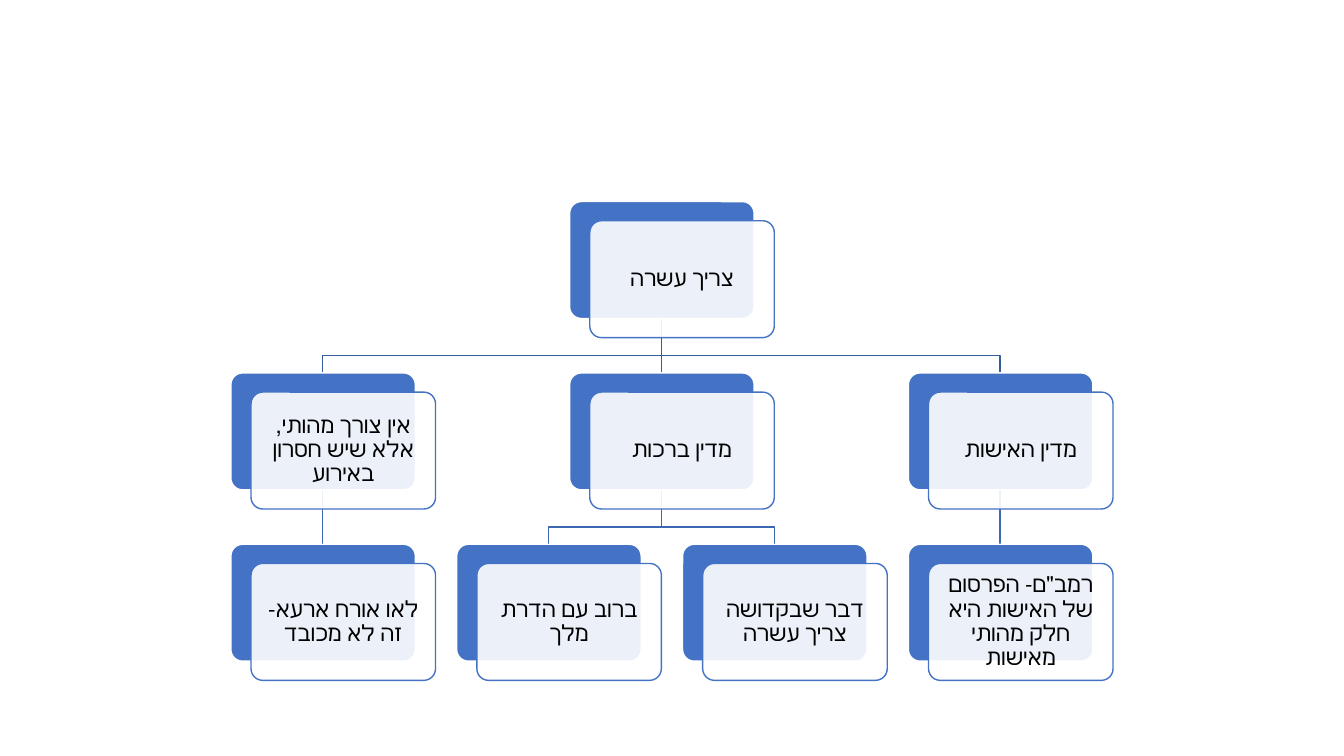
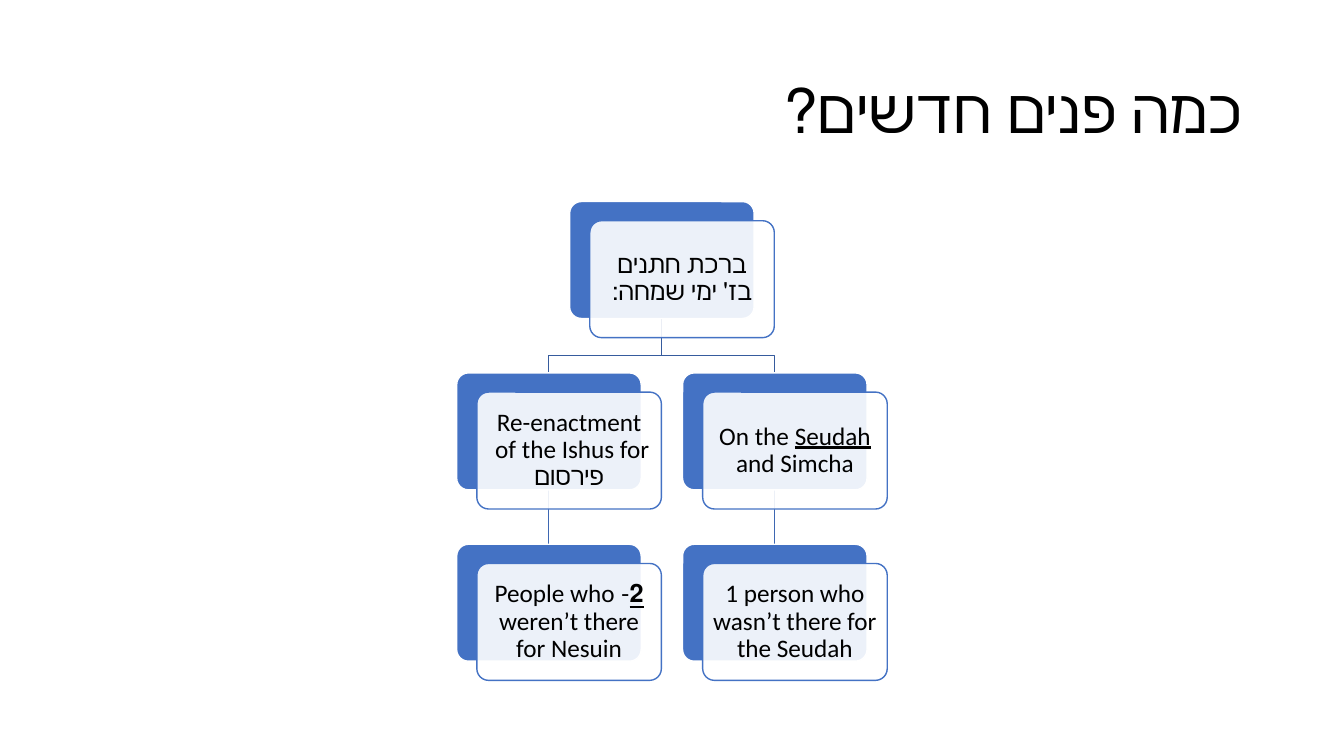
from dataclasses import dataclass

from lxml import etree
from pptx import Presentation
from pptx.dml.color import RGBColor
from pptx.enum import shapes, text
from pptx.oxml import ns
from pptx.util import Pt

PX = 9144


@dataclass(frozen=True)
class Theme:
    font: str = "Calibri"
    ink: str = "000000"
    blue: str = "4472C4"
    white: str = "FFFFFF"
    links: tuple = ("365B9D", "3E67B2")
    head: int = 44
    opaque: int = 90
    stroke: int = 1
    tight: float = 0.9


@dataclass(frozen=True)
class Grid:
    left: int = 565
    top: int = 200
    half: int = 112
    drop: int = 170
    wide: int = 183
    high: int = 116
    shift: tuple = (20, 19)
    bend: int = 37
    inset: int = 7

    def spot(self, col, row):
        return self.left + col * self.half, self.top + row * self.drop


@dataclass(frozen=True)
class Node:
    col: int
    row: int
    words: tuple
    root: int = None
    marks: str = ""
    rtl: bool = True


class Deck:
    def __init__(self, theme, grid):
        self.theme, self.grid = theme, grid
        self.show = Presentation()
        self.show.slide_width, self.show.slide_height = 1333 * PX, 750 * PX
        self.slide = None

    def page(self):
        self.slide = self.show.slides.add_slide(self.show.slide_layouts[6])

    def stroke(self, shape, color):
        shape.line.color.rgb = RGBColor.from_string(color)
        shape.line.width = Pt(self.theme.stroke)

    def label(self, shape, words, size, align, inset, rtl=True, marks=""):
        frame = shape.text_frame
        frame.word_wrap = True
        frame.vertical_anchor = text.MSO_ANCHOR.MIDDLE
        frame.margin_left = frame.margin_right = inset[0] * PX
        frame.margin_top = frame.margin_bottom = inset[1] * PX
        para = frame.paragraphs[0]
        para.text = words[0]
        for word in words[1:]:
            para.add_run().text = word
        para.alignment = align
        para.line_spacing = self.theme.tight
        para._p.get_or_add_pPr().set("rtl", str(int(rtl)))
        for run in para.runs:
            run.font.name = self.theme.font
            run.font.size = Pt(size)
            run.font.color.rgb = RGBColor.from_string(self.theme.ink)
        for run, mark in zip(para.runs, marks):
            run.font.bold = mark == "b"
            run.font.underline = mark in "bu"

    def title(self, words):
        box = self.slide.shapes.add_textbox(92 * PX, 40 * PX, 1150 * PX, 145 * PX)
        self.label(box, (words,), self.theme.head, text.PP_ALIGN.RIGHT, (10, 5))

    def panel(self, x, y, fill, line):
        grid = self.grid
        shape = self.slide.shapes.add_shape(
            shapes.MSO_SHAPE.ROUNDED_RECTANGLE,
            x * PX, y * PX, grid.wide * PX, grid.high * PX)
        shape.adjustments[0] = 0.1
        shape.shadow.inherit = False
        shape.fill.solid()
        shape.fill.fore_color.rgb = RGBColor.from_string(fill)
        self.stroke(shape, line)
        return shape

    def card(self, node, size):
        theme, grid = self.theme, self.grid
        x, y = grid.spot(node.col, node.row)
        self.panel(x, y, theme.blue, theme.white)
        front = self.panel(x + grid.shift[0], y + grid.shift[1], theme.white, theme.blue)
        color = front._element.spPr.find(ns.qn("a:solidFill")).find(ns.qn("a:srgbClr"))
        etree.SubElement(color, ns.qn("a:alpha")).set("val", str(theme.opaque * 1000))
        self.label(front, node.words, size, text.PP_ALIGN.CENTER,
                   (grid.inset, grid.inset), node.rtl, node.marks)

    def link(self, start, end):
        grid = self.grid
        x, y = grid.spot(start.col, start.row)
        far, low = grid.spot(end.col, end.row)
        x, far, y = x + grid.wide // 2, far + grid.wide // 2, y + grid.high
        if x == far:
            line = self.slide.shapes.add_connector(
                shapes.MSO_CONNECTOR.STRAIGHT, x * PX, y * PX, far * PX, low * PX)
            etree.SubElement(line._element.spPr, ns.qn("a:effectLst"))
        else:
            bend = y + grid.bend
            elbow = self.slide.shapes.build_freeform(x, y, PX)
            elbow.add_line_segments([(x, bend), (far, bend), (far, low)], close=False)
            line = elbow.convert_to_shape()
            line.fill.background()
            line.shadow.inherit = False
        self.stroke(line, self.theme.links[start.row])

    def tree(self, nodes, size):
        for node in nodes:
            if node.root is not None:
                self.link(nodes[node.root], node)
        for node in nodes:
            self.card(node, size)


NEEDS = (
    Node(0, 0, ("צריך עשרה",)),
    Node(-3, 1, ("אין צורך מהותי, אלא שיש חסרון באירוע",), 0),
    Node(0, 1, ("מדין ברכות",), 0),
    Node(3, 1, ("מדין האישות",), 0),
    Node(-3, 2, ("לאו אורח ארעא- זה לא מכובד",), 1),
    Node(-1, 2, ("ברוב עם הדרת מלך",), 2),
    Node(1, 2, ("דבר שבקדושה צריך עשרה",), 2),
    Node(3, 2, ('רמב"ם- הפרסום של האישות היא חלק מהותי מאישות',), 3),
)

FACES = (
    Node(0, 0, ("ברכת חתנים בז' ימי שמחה:",)),
    Node(-1, 1, ("Re-enactment of the Ishus for \vפירסום",), 0),
    Node(1, 1, ("On the ", "Seudah", " and Simcha"), 0, "-u-"),
    Node(-1, 2, ("2", "- People who weren’t there for Nesuin"), 1, "b-"),
    Node(1, 2, ("1 person who wasn’t there for the Seudah",), 2, rtl=False),
)


def main():
    deck = Deck(Theme(), Grid())
    deck.page()
    deck.tree(NEEDS, 16)
    deck.page()
    deck.title("כמה פנים חדשים?")
    deck.tree(FACES, 18)
    deck.show.save("out.pptx")


if __name__ == "__main__":
    main()
